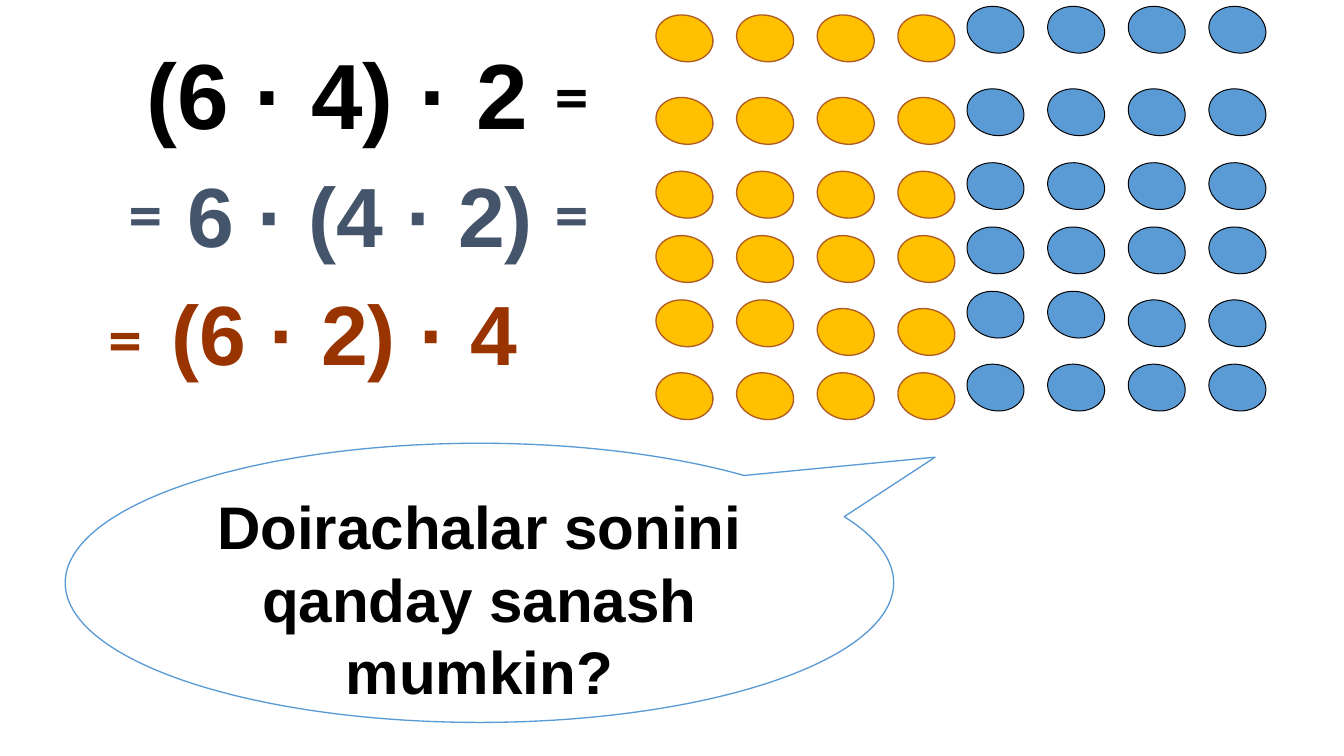
"""Build a slide that counts rows of dots by grouping factors."""
from dataclasses import dataclass
from itertools import product

from lxml.etree import SubElement
from pptx import Presentation
from pptx.dml.color import RGBColor
from pptx.enum.shapes import MSO_SHAPE
from pptx.enum.text import MSO_ANCHOR, PP_ALIGN
from pptx.oxml.ns import qn
from pptx.util import Inches, Pt


@dataclass(frozen=True)
class Theme:
    """Hold colours, fonts and type sizes."""
    black: str = "000000"
    white: str = "FFFFFF"
    slate: str = "44546A"
    rust: str = "993300"
    blue: str = "5B9BD5"
    gold: str = "FFC000"
    brown: str = "AF5C24"
    main: str = "Arial"
    sign: str = "Calibri"
    large: float = 69.5
    mid: float = 63.1
    small: float = 50.5
    ask: float = 45.1


class Board:
    """Draw styled elements on a grid of one-inch columns and rows."""

    def __init__(self, slide, theme):
        """Keep the slide and its theme."""
        self.slide = slide
        self.theme = theme

    def shape(self, kind, box, fill, edge, width):
        """Add a flat preset shape."""
        item = self.slide.shapes.add_shape(kind, *map(Inches, box))
        item.shadow.inherit = False
        item.fill.solid()
        item.fill.fore_color.rgb = RGBColor.from_string(fill)
        item.line.color.rgb = RGBColor.from_string(edge)
        item.line.width = Pt(width)
        return item

    def letter(self, item, text, face, size, color):
        """Set bold text inside a shape."""
        frame = item.text_frame
        frame.word_wrap = True
        frame.vertical_anchor = MSO_ANCHOR.TOP
        frame.margin_left = frame.margin_right = Inches(0.13)
        frame.margin_top = frame.margin_bottom = Inches(0.06)
        line = frame.paragraphs[0]
        line.text = text
        line.font.name = face
        line.font.size = Pt(size)
        line.font.bold = True
        line.font.color.rgb = RGBColor.from_string(color)
        return line

    def label(self, text, box, face, size, color):
        """Add a text box with half a line of space before."""
        item = self.slide.shapes.add_textbox(*map(Inches, box))
        line = self.letter(item, text, face, size, color)
        props = line._p.get_or_add_pPr()
        space = props.makeelement(qn("a:spcBef"), {})
        SubElement(space, qn("a:spcPct")).set("val", "50000")
        props.insert(0, space)

    def dots(self, left, top, fill, edge, width):
        """Add six rows of four tilted dots."""
        rows = (0, 0.86, 1.63, 2.3, 2.97, 3.73)
        for (row, drop), col in product(enumerate(rows), range(4)):
            shift = 0.09 if row == 4 and col > 1 else 0
            box = (left + 0.84 * col, top + drop + shift, 0.6, 0.48)
            dot = self.shape(MSO_SHAPE.OVAL, box, fill, edge, width)
            dot.rotation = 14.1

    def bubble(self, text, box, tip):
        """Add a speech bubble whose tip is a share of its size."""
        look = self.theme
        item = self.shape(MSO_SHAPE.OVAL_CALLOUT, box, look.white, look.blue, 1)
        item.adjustments[0], item.adjustments[1] = tip
        line = self.letter(item, text, look.main, look.ask, look.black)
        line.alignment = PP_ALIGN.CENTER


def main():
    """Build and save the slide."""
    deck = Presentation()
    deck.slide_width, deck.slide_height = Inches(14), Inches(7.88)
    look = Theme()
    board = Board(deck.slides.add_slide(deck.slide_layouts[6]), look)

    board.dots(10.07, 0.07, look.blue, look.black, 0.75)
    board.dots(6.83, 0.16, look.gold, look.brown, 1)

    for text, box, size, color in (
        ("(6 · 4) · 2", (1.4, 0.32, 4.53, 1.33), look.large, look.black),
        ("6 · (4 · 2)", (1.82, 1.64, 4.19, 1.22), look.mid, look.slate),
        ("(6 · 2) · 4", (1.66, 2.87, 4.27, 1.22), look.mid, look.rust),
    ):
        board.label(text, box, look.main, size, color)

    for left, top, color in (
        (5.65, 0.49, look.black),
        (1.21, 1.72, look.slate),
        (5.65, 1.72, look.slate),
        (1, 3.03, look.rust),
    ):
        board.label("=", (left, top, 0.86, 1), look.sign, look.small, color)

    board.bubble("Doirachalar sonini qanday sanash mumkin?",
                 (0.68, 4.62, 8.63, 2.91), (0.55, -0.45))
    deck.save("out.pptx")


if __name__ == "__main__":
    main()
